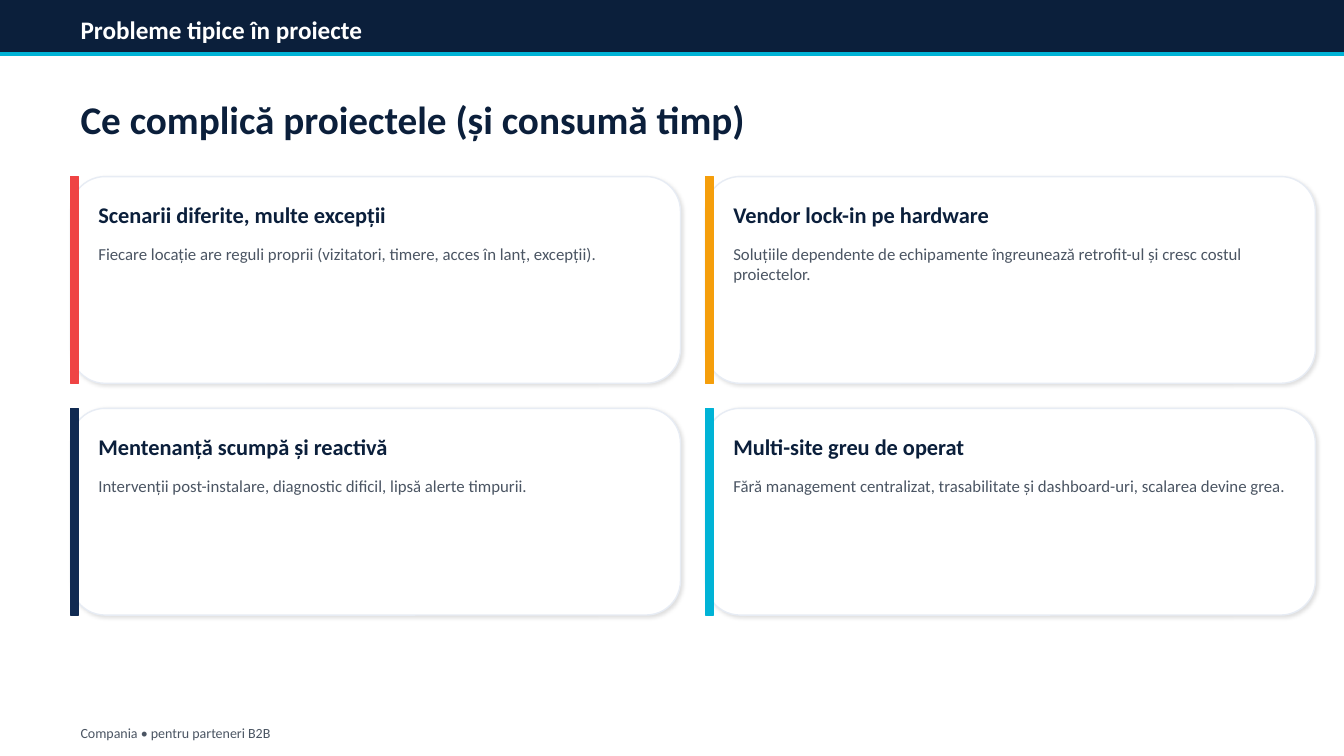
from dataclasses import dataclass

from lxml import etree
from pptx import Presentation
from pptx.dml.color import RGBColor
from pptx.enum.shapes import MSO_SHAPE
from pptx.enum.text import MSO_ANCHOR
from pptx.oxml.ns import qn
from pptx.util import Cm, Pt

RECTANGLE = MSO_SHAPE.RECTANGLE
ROUNDED = MSO_SHAPE.ROUNDED_RECTANGLE
TOP = MSO_ANCHOR.TOP
MIDDLE = MSO_ANCHOR.MIDDLE


@dataclass(frozen=True)
class Theme:
    font: str = "Calibri"
    navy: str = "0B1F3B"
    blue: str = "102A52"
    cyan: str = "00B3D6"
    red: str = "EF4444"
    amber: str = "F59E0B"
    white: str = "FFFFFF"
    border: str = "E7ECF4"
    grey: str = "4B5563"
    title_size: int = 28
    header_size: int = 18
    card_title_size: int = 16
    body_size: int = 12
    footer_size: int = 10


@dataclass(frozen=True)
class Area:
    left: float
    top: float
    width: float
    height: float

    def lengths(self) -> tuple:
        return Cm(self.left), Cm(self.top), Cm(self.width), Cm(self.height)


@dataclass(frozen=True)
class TextStyle:
    size: int
    color: str
    bold: bool = False
    anchor: MSO_ANCHOR = MIDDLE


@dataclass(frozen=True)
class Card:
    title: str
    body: str
    accent: str


THEME = Theme()
SLIDE_WIDTH, SLIDE_HEIGHT = 33.87, 19.05
MARGIN = 1.78
CARDS_TOP = 4.45
CARD_WIDTH, CARD_HEIGHT = 15.37, 5.21
CARD_GAP = 0.63
COLUMNS = 2
ACCENT_WIDTH = 0.2
CARD_PADDING = 0.45
CARD_TEXT_WIDTH = 14.55

HEADER_STYLE = TextStyle(THEME.header_size, THEME.white, True)
TITLE_STYLE = TextStyle(THEME.title_size, THEME.navy, True)
FOOTER_STYLE = TextStyle(THEME.footer_size, THEME.grey)
CARD_TITLE_STYLE = TextStyle(THEME.card_title_size, THEME.navy, True)
CARD_BODY_STYLE = TextStyle(THEME.body_size, THEME.grey, anchor=TOP)

CARDS = [
    Card("Scenarii diferite, multe excepții",
         "Fiecare locație are reguli proprii (vizitatori, timere, acces în lanț, excepții).",
         THEME.red),
    Card("Vendor lock-in pe hardware",
         "Soluțiile dependente de echipamente îngreunează retrofit-ul și cresc costul proiectelor.",
         THEME.amber),
    Card("Mentenanță scumpă și reactivă",
         "Intervenții post-instalare, diagnostic dificil, lipsă alerte timpurii.",
         THEME.blue),
    Card("Multi-site greu de operat",
         "Fără management centralizat, trasabilitate și dashboard-uri, scalarea devine grea.",
         THEME.cyan),
]


def add_panel(page, area: Area, fill: str, line: str, kind=RECTANGLE):
    panel = page.shapes.add_shape(kind, *area.lengths())
    panel.shadow.inherit = False
    panel.fill.solid()
    panel.fill.fore_color.rgb = RGBColor.from_string(fill)
    panel.line.color.rgb = RGBColor.from_string(line)
    panel.line.width = Pt(1)
    return panel


def add_shadow(panel) -> None:
    effects = panel._element.spPr.find(qn("a:effectLst"))
    shadow = etree.SubElement(effects, qn("a:outerShdw"), {
        "blurRad": str(Pt(3)), "dist": str(Pt(1.5)),
        "dir": "2700000", "algn": "tl", "rotWithShape": "0"})
    color = etree.SubElement(shadow, qn("a:srgbClr"), val="000000")
    etree.SubElement(color, qn("a:alpha"), val="12000")


def add_text(page, area: Area, text: str, style: TextStyle) -> None:
    box = page.shapes.add_textbox(*area.lengths())
    frame = box.text_frame
    frame.word_wrap = True
    frame.vertical_anchor = style.anchor
    span = frame.paragraphs[0].add_run()
    span.text = text
    formats = {"name": THEME.font, "size": Pt(style.size), "bold": style.bold}
    for name, value in formats.items():
        setattr(span.font, name, value)
    span.font.color.rgb = RGBColor.from_string(style.color)


def add_card(page, card: Card, left: float, top: float) -> None:
    panel = add_panel(page, Area(left, top, CARD_WIDTH, CARD_HEIGHT),
                      THEME.white, THEME.border, ROUNDED)
    add_shadow(panel)
    add_panel(page, Area(left, top, ACCENT_WIDTH, CARD_HEIGHT), card.accent, card.accent)
    text_left = left + CARD_PADDING
    add_text(page, Area(text_left, top + CARD_PADDING, CARD_TEXT_WIDTH, 1.02),
             card.title, CARD_TITLE_STYLE)
    add_text(page, Area(text_left, top + 1.57, CARD_TEXT_WIDTH, 3.18),
             card.body, CARD_BODY_STYLE)


def main() -> None:
    deck = Presentation()
    deck.slide_width, deck.slide_height = Cm(SLIDE_WIDTH), Cm(SLIDE_HEIGHT)
    page = deck.slides.add_slide(deck.slide_layouts[6])

    add_panel(page, Area(0, 0, SLIDE_WIDTH, 1.4), THEME.navy, THEME.navy)
    add_panel(page, Area(0, 1.32, SLIDE_WIDTH, 0.08), THEME.cyan, THEME.cyan)
    add_text(page, Area(MARGIN, 0.3, 30.3, 0.89), "Probleme tipice în proiecte", HEADER_STYLE)
    add_text(page, Area(MARGIN, 18.16, 30.3, 0.64), "Compania • pentru parteneri B2B", FOOTER_STYLE)
    add_text(page, Area(MARGIN, 2.29, 30.99, 1.4),
             "Ce complică proiectele (și consumă timp)", TITLE_STYLE)

    for index, card in enumerate(CARDS):
        row, column = divmod(index, COLUMNS)
        add_card(page, card,
                 MARGIN + column * (CARD_WIDTH + CARD_GAP),
                 CARDS_TOP + row * (CARD_HEIGHT + CARD_GAP))

    deck.save("out.pptx")


if __name__ == "__main__":
    main()
